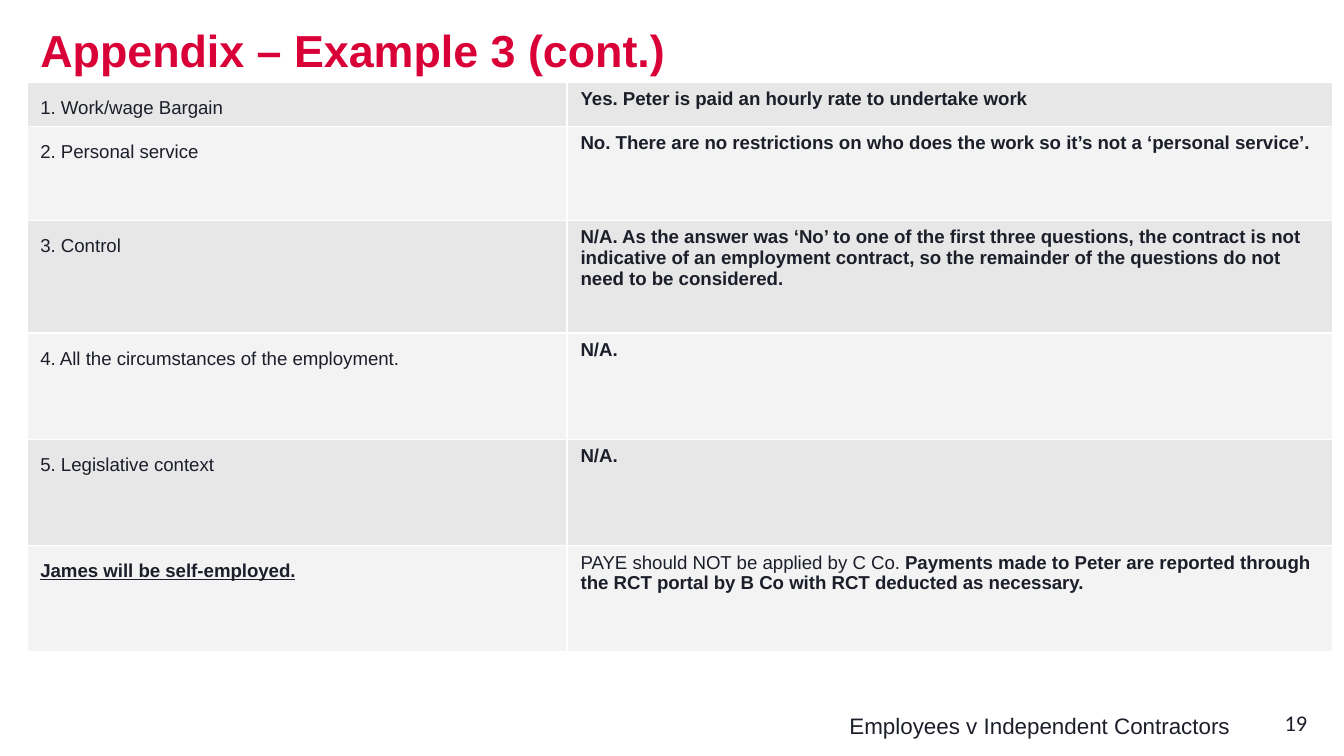
from dataclasses import dataclass

from lxml import etree
from pptx import Presentation
from pptx.dml.color import RGBColor
from pptx.enum.text import MSO_ANCHOR, MSO_AUTO_SIZE, PP_ALIGN
from pptx.oxml.ns import qn
from pptx.util import Inches, Pt

TOP = MSO_ANCHOR.TOP
NO_FIT = MSO_AUTO_SIZE.NONE
LEFT, RIGHT = PP_ALIGN.LEFT, PP_ALIGN.RIGHT
TITLE_ONLY = 5


@dataclass(frozen=True)
class Theme:
    title: str = "D90038"
    ink: str = "1C1F2A"
    bands: tuple = ("E7E7E8", "F3F3F4")
    border: str = "FFFFFF"
    font: str = "Arial"
    number_font: str = "Calibri"
    title_size: int = 24
    footer_size: int = 12
    table_size: int = 10
    label_leading: float = 15.8


THEME = Theme()

SLIDE_WIDTH = Inches(10)
SLIDE_HEIGHT = SLIDE_WIDTH * 9 // 16
MARGIN = 0.2
TABLE_TOP = 0.61
COLS = (4.02, 5.7)
ROWS = (0.33, 0.7, 0.84, 0.79, 0.79, 0.79)

BOLD = {"bold": True}
UNDERLINED = {"bold": True, "underline": True}

TESTS = [
    ([("1. Work/wage Bargain", {})],
     [("Yes. Peter is paid an hourly rate to undertake work", BOLD)]),
    ([("2. Personal service", {})],
     [("No. There are no restrictions on who does the work so it’s not a "
       "‘personal service’.", BOLD)]),
    ([("3. Control", {})],
     [("N/A. As the answer was ‘No’ to one of the first three questions, "
       "the contract is not indicative of an employment contract, so the "
       "remainder of the questions do not need to be considered.", BOLD)]),
    ([("4. All the circumstances of the employment.", {})], [("N/A.", BOLD)]),
    ([("5. Legislative context", {})], [("N/A.", BOLD)]),
    ([("James will be self-employed.", UNDERLINED)],
     [("PAYE should NOT be applied by C Co. ", {}),
      ("Payments made to Peter are reported through the RCT portal by B Co "
       "with RCT deducted as necessary.", BOLD)]),
]


def add_text(p, text, size, color=THEME.ink, font=THEME.font,
             bold=False, underline=False):
    r = p.add_run()
    r.text = text
    r.font.name = font
    r.font.size = Pt(size)
    r.font.bold = bold
    r.font.underline = underline
    r.font.color.rgb = RGBColor.from_string(color)


def write_box(sp, text, align=LEFT, **style):
    tf = sp.text_frame
    tf.word_wrap = True
    tf.auto_size = NO_FIT
    tf.vertical_anchor = TOP
    p = tf.paragraphs[0]
    p.alignment = align
    add_text(p, text, **style)


def add_title(s, text, left, top, width, height):
    sp = s.shapes.title
    sp.left, sp.top = Inches(left), Inches(top)
    sp.width, sp.height = Inches(width), Inches(height)
    write_box(sp, text, size=THEME.title_size, color=THEME.title, bold=True)


def add_label(s, text, left, top, width, height, **style):
    sp = s.shapes.add_textbox(Inches(left), Inches(top),
                              Inches(width), Inches(height))
    write_box(sp, text, size=THEME.footer_size, **style)


def format_cell(cell, runs, band, leading=None):
    tcPr = cell._tc.get_or_add_tcPr()
    for side in ("a:lnL", "a:lnR", "a:lnT", "a:lnB"):
        ln = etree.SubElement(tcPr, qn(side), w=str(Pt(1)))
        fill = etree.SubElement(ln, qn("a:solidFill"))
        etree.SubElement(fill, qn("a:srgbClr"), val=THEME.border)
    cell.fill.solid()
    cell.fill.fore_color.rgb = RGBColor.from_string(band)
    p = cell.text_frame.paragraphs[0]
    if leading:
        p.line_spacing = Pt(leading)
    for text, style in runs:
        add_text(p, text, THEME.table_size, **style)


def add_tests_table(s, tests):
    table = s.shapes.add_table(
        len(ROWS), len(COLS), Inches(MARGIN), Inches(TABLE_TOP),
        Inches(sum(COLS)), Inches(sum(ROWS))).table
    for column, width in zip(table.columns, COLS):
        column.width = Inches(width)
    for i, (row, height, (label, answer)) in enumerate(
            zip(table.rows, ROWS, tests)):
        row.height = Inches(height)
        band = THEME.bands[i % 2]
        format_cell(row.cells[0], label, band, THEME.label_leading)
        format_cell(row.cells[1], answer, band)


def main():
    prs = Presentation()
    prs.slide_width, prs.slide_height = SLIDE_WIDTH, SLIDE_HEIGHT
    s = prs.slides.add_slide(prs.slide_layouts[TITLE_ONLY])
    add_title(s, "Appendix – Example 3 (cont.)", MARGIN, 0.12, 9.79, 0.49)
    add_label(s, "Employees v Independent Contractors ",
              6.16, 5.25, 3.14, 0.26, align=RIGHT)
    add_tests_table(s, TESTS)
    add_label(s, "19", 9.46, 5.23, 2.33, 0.3, font=THEME.number_font)
    prs.save("out.pptx")


if __name__ == "__main__":
    main()
